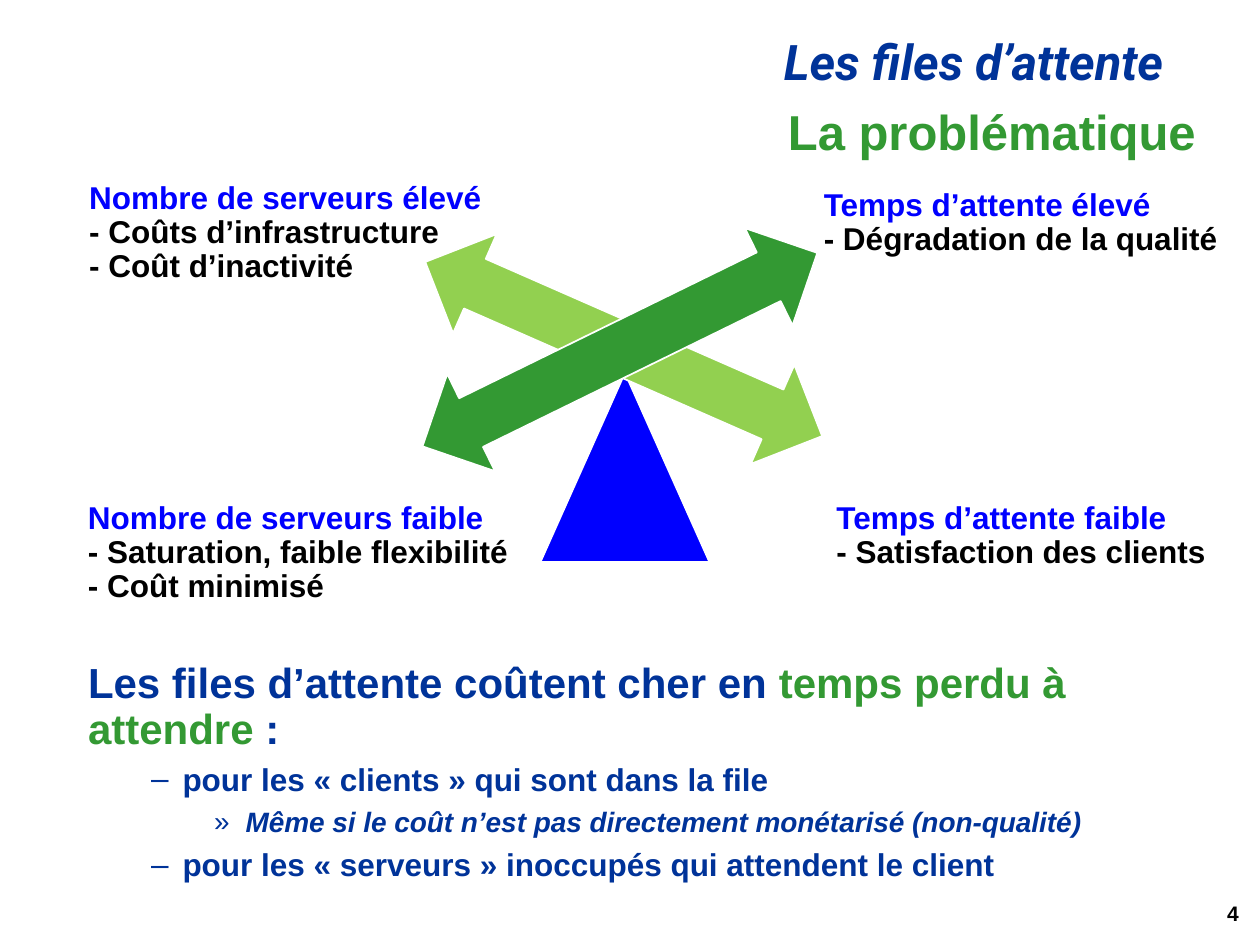
from dataclasses import dataclass

from lxml import etree
from pptx import Presentation, util as u
from pptx.dml.color import RGBColor
from pptx.enum import shapes, text
from pptx.oxml.ns import qn


@dataclass(frozen=True)
class Theme:
    navy: str = "003399"
    green: str = "339933"
    lime: str = "92D050"
    blue: str = "0000FF"
    black: str = "000000"
    white: str = "FFFFFF"
    font: str = "Arial"
    banner_font: str = "Roboto"
    title: int = 28
    lead: int = 24
    label: int = 18
    detail: int = 16
    number: int = 12
    leading: float = 0.9
    gap: int = 6


@dataclass(frozen=True)
class Box:
    """Left, top, width and height in grid cells (100 columns by 75 rows)."""
    col: float
    row: float
    cols: float
    rows: float

    def emu(self) -> list[int]:
        return [int(v * CELL) for v in (self.col, self.row, self.cols, self.rows)]


@dataclass(frozen=True)
class Label:
    box: Box
    heading: str
    points: tuple[str, ...]


@dataclass(frozen=True)
class Line:
    level: int
    size: int
    runs: tuple[tuple[str, str], ...]
    bullet: str = ""
    italic: bool = False


@dataclass(frozen=True)
class Solid:
    kind: shapes.MSO_SHAPE
    box: Box
    color: str
    turn: float = 0


T = Theme()
CELL = u.Inches(0.1)

SOLIDS = (
    Solid(shapes.MSO_SHAPE.ISOSCELES_TRIANGLE, Box(42.9, 29.6, 13.4, 15), T.blue),
    Solid(shapes.MSO_SHAPE.UP_DOWN_ARROW, Box(45.2, 10.5, 8.6, 34.4), T.lime, 293.7),
    Solid(shapes.MSO_SHAPE.UP_DOWN_ARROW, Box(44.9, 10.3, 8.6, 34.9), T.green, 63.9),
)
LABELS = (
    Label(Box(6.1, 14, 33.4, 9.2), "Nombre de serveurs élevé",
          ("- Coûts d’infrastructure", "- Coût d’inactivité")),
    Label(Box(64.4, 14.5, 33.6, 6.5), "Temps d’attente élevé",
          ("- Dégradation de la qualité",)),
    Label(Box(6, 39.4, 35.7, 9.2), "Nombre de serveurs faible",
          ("- Saturation, faible flexibilité", "- Coût minimisé")),
    Label(Box(65.4, 39.4, 31.6, 6.5), "Temps d’attente faible",
          ("- Satisfaction des clients",)),
)
BODY = (
    Line(0, T.lead, (("Les files d’attente coûtent cher en ", T.navy),
                     ("temps perdu à attendre ", T.green), (":", T.navy))),
    Line(1, T.label, (("pour les « clients » qui sont dans la file", T.navy),), "–"),
    Line(2, T.detail, (("Même si le coût n’est pas directement monétarisé (non-qualité)",
                        T.navy),), "»", True),
    Line(1, T.label, (("pour les « serveurs » inoccupés qui attendent le client",
                       T.navy),), "–"),
)


def add_run(p, words: str, size: int, color: str, font: str = T.font,
            italic: bool = False) -> None:
    r = p.add_run()
    r.text = words
    r.font.name, r.font.size = font, u.Pt(size)
    r.font.bold, r.font.italic = True, italic
    r.font.color.rgb = RGBColor.from_string(color)


def add_text(s, box: Box, wrap: bool = True):
    tf = s.shapes.add_textbox(*box.emu()).text_frame
    tf.word_wrap = wrap
    return tf


def next_paragraph(tf, first: bool):
    p = tf.paragraphs[0] if first else tf.add_paragraph()
    p.line_spacing = T.leading
    return p


def add_solid(s, solid: Solid) -> None:
    sp = s.shapes.add_shape(solid.kind, *solid.box.emu())
    sp.shadow.inherit = False
    sp.rotation = solid.turn
    sp.fill.solid()
    sp.fill.fore_color.rgb = RGBColor.from_string(solid.color)
    sp.line.color.rgb = RGBColor.from_string(T.white)
    sp.line.width = u.Pt(1)


def add_label(s, label: Label) -> None:
    tf = add_text(s, label.box, wrap=False)
    add_run(next_paragraph(tf, True), label.heading, T.label, T.blue)
    p = next_paragraph(tf, False)
    for i, point in enumerate(label.points):
        if i:
            p.add_line_break()
        add_run(p, point, T.label, T.black)


def set_bullet(p, char: str, level: int) -> None:
    pPr = p._p.get_or_add_pPr()
    pPr.set("marL", str(u.Inches(0.25 + 0.5 * level)))
    pPr.set("indent", str(-u.Inches(0.25)))
    etree.SubElement(pPr, qn("a:buFont"), typeface=T.font)
    etree.SubElement(pPr, qn("a:buChar"), char=char)


def add_body(s, box: Box, lines: tuple[Line, ...]) -> None:
    tf = add_text(s, box)
    for i, line in enumerate(lines):
        p = next_paragraph(tf, i == 0)
        p.level = line.level
        p.space_before = u.Pt(T.gap)
        if line.bullet:
            set_bullet(p, line.bullet, line.level)
        for words, color in line.runs:
            add_run(p, words, line.size, color, italic=line.italic)


def main() -> None:
    prs = Presentation()
    prs.slide_width, prs.slide_height = 100 * CELL, 75 * CELL
    s = prs.slides.add_slide(prs.slide_layouts[5])

    # Course banner and slide title
    p = next_paragraph(add_text(s, Box(12.5, 2.5, 80.8, 5.2)), True)
    p.alignment = text.PP_ALIGN.RIGHT
    add_run(p, "Les files d’attente", T.title, T.navy, T.banner_font, True)

    title = s.shapes.title
    title.left, title.top, title.width, title.height = Box(16.7, 8.2, 79.2, 5).emu()
    tf = title.text_frame
    tf.vertical_anchor = text.MSO_ANCHOR.MIDDLE
    tf.auto_size = text.MSO_AUTO_SIZE.NONE
    p = next_paragraph(tf, True)
    p.alignment = text.PP_ALIGN.RIGHT
    add_run(p, "La problématique", T.title, T.green)

    # Balance and its four outcomes
    for solid in SOLIDS:
        add_solid(s, solid)
    for label in LABELS:
        add_label(s, label)

    # Conclusion
    add_body(s, Box(6, 52.1, 89.8, 20), BODY)

    # Slide number
    tf = add_text(s, Box(76.8, 70.5, 22.5, 4))
    tf.vertical_anchor = text.MSO_ANCHOR.MIDDLE
    p = tf.paragraphs[0]
    p.alignment = text.PP_ALIGN.RIGHT
    add_run(p, "4", T.number, T.black)

    prs.save("out.pptx")


if __name__ == "__main__":
    main()
